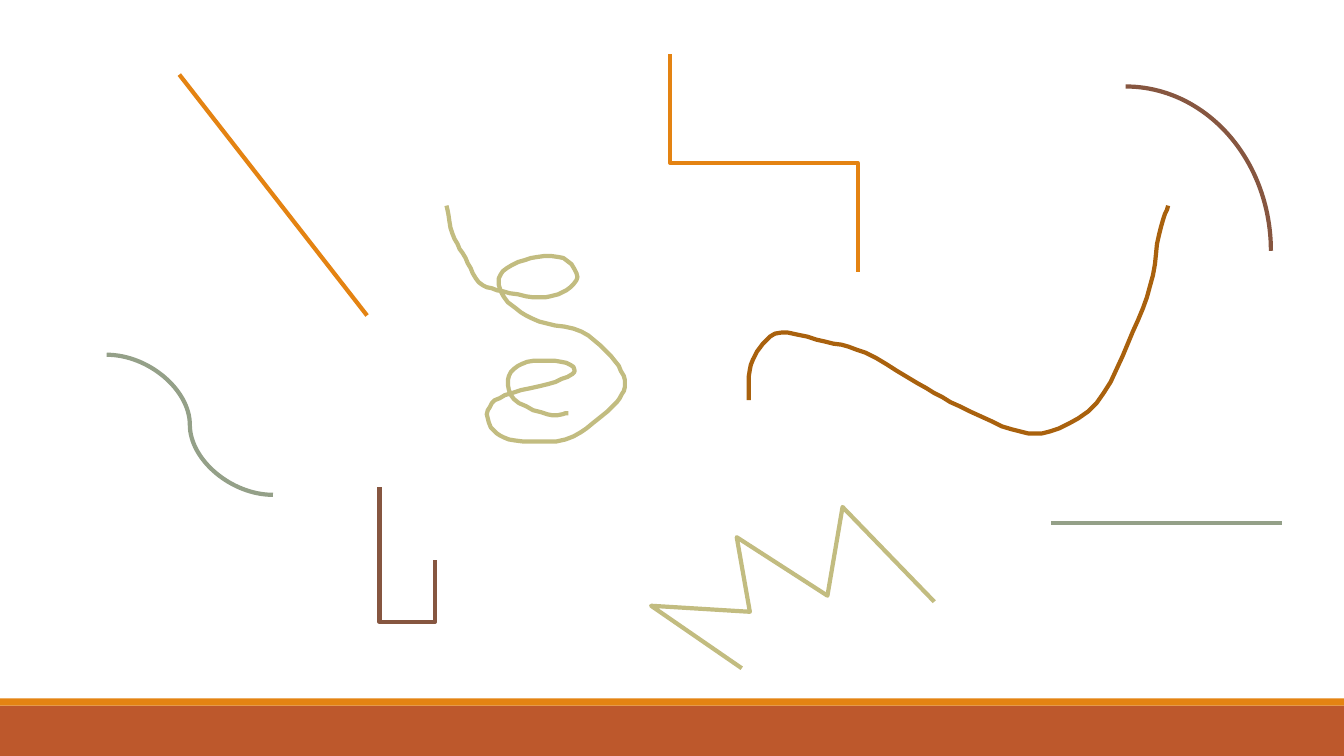
from dataclasses import dataclass

from lxml.etree import SubElement
from pptx import Presentation
from pptx.dml.color import RGBColor
from pptx.enum.shapes import MSO_CONNECTOR as Conn, MSO_SHAPE as Shape
from pptx.oxml.ns import qn
from pptx.shapes.autoshape import Shape as AutoShape
from pptx.shapes.connector import Connector
from pptx.slide import Slide
from pptx.util import Cm, Pt

Point = tuple[float, float]


@dataclass(frozen=True)
class Theme:
    orange: RGBColor = RGBColor.from_string("E48312")
    rust: RGBColor = RGBColor.from_string("BD582C")
    brown: RGBColor = RGBColor.from_string("865640")
    amber: RGBColor = RGBColor.from_string("A9610D")
    olive: RGBColor = RGBColor.from_string("C2BC80")
    sage: RGBColor = RGBColor.from_string("94A088")
    stroke: Pt = Pt(3)


THEME = Theme()
SLIDE_W, SLIDE_H = 33.87, 19.05
FREEFORM_UNIT = Cm(2.54) / 100  # freeform points are in hundredths of an inch
CURVE_STEPS = 5


@dataclass(frozen=True)
class Bar:
    top: float
    height: float
    color: RGBColor


@dataclass(frozen=True)
class Link:
    kind: Conn
    start: Point
    end: Point
    color: RGBColor
    rotation: int = 0
    bend: float | None = None


@dataclass(frozen=True)
class Arc:
    left: float
    top: float
    width: float
    height: float
    color: RGBColor


@dataclass(frozen=True)
class Outline:
    points: list[Point]
    color: RGBColor
    smooth: bool = True


WAVE = [
    (743, 397), (744, 367), (754, 345), (775, 330), (819, 339), (859, 350),
    (910, 380), (952, 403), (1004, 426), (1042, 428), (1088, 400),
    (1119, 341), (1141, 284), (1150, 233), (1159, 204),
]
SCRIBBLE = [
    (564, 410), (543, 411), (510, 396), (505, 373), (523, 359), (557, 359),
    (570, 369), (544, 381), (501, 392), (484, 407), (490, 427), (511, 437),
    (561, 436), (593, 416), (615, 395), (620, 377), (606, 353), (577, 329),
    (535, 319), (508, 303), (496, 286), (499, 269), (527, 256), (559, 256),
    (573, 275), (558, 290), (536, 295), (499, 289), (475, 280), (462, 256),
    (449, 232), (443, 204),
]
ZIGZAG = [
    (736, 663), (646, 601), (744, 607), (731, 533), (821, 591), (836, 503),
    (927, 597),
]

BARS = [Bar(17.78, 1.27, THEME.rust), Bar(17.6, 0.18, THEME.orange)]
STROKES = [
    Link(Conn.STRAIGHT, (4.52, 1.88), (9.25, 7.95), THEME.orange),
    Link(Conn.ELBOW, (22, 1.75), (16.51, 6.47), THEME.orange, rotation=270),
    Outline(WAVE, THEME.amber),
    Link(Conn.CURVE, (2.69, 8.94), (6.88, 12.47), THEME.sage),
    Arc(24.71, 2.18, 7.32, 8.28, THEME.brown),
    Link(Conn.STRAIGHT, (26.49, 13.18), (32.31, 13.18), THEME.sage),
    Outline(SCRIBBLE, THEME.olive),
    Link(Conn.ELBOW, (11.18, 12.5), (9.35, 13.9), THEME.brown, rotation=270, bend=1.85),
    Outline(ZIGZAG, THEME.olive, smooth=False),
]


def smooth_points(points: list[Point]) -> list[Point]:
    """Return points along a Catmull-Rom spline through the given ones."""
    padded = [points[0], *points, points[-1]]
    curve = [points[0]]
    for quad in zip(padded, padded[1:], padded[2:], padded[3:]):
        for step in range(1, CURVE_STEPS + 1):
            t = step / CURVE_STEPS
            x, y = (
                b + t / 2 * (c - a + t * (2 * a - 5 * b + 4 * c - d + t * (3 * (b - c) + d - a)))
                for a, b, c, d in zip(*quad)
            )
            curve.append((x, y))
    return curve


def draw_bar(s: Slide, bar: Bar) -> None:
    sp = s.shapes.add_shape(Shape.RECTANGLE, 0, Cm(bar.top), Cm(SLIDE_W), Cm(bar.height))
    sp.shadow.inherit = False
    sp.fill.solid()
    sp.fill.fore_color.rgb = bar.color
    sp.line.fill.background()


def set_stroke(sp: AutoShape | Connector, color: RGBColor) -> None:
    sp.line.color.rgb = color
    sp.line.width = THEME.stroke


def draw_link(s: Slide, link: Link) -> None:
    """Draw a connector; its start and end are those before rotation."""
    ends = [Cm(v) for v in (*link.start, *link.end)]
    cxn = s.shapes.add_connector(link.kind, *ends)
    set_stroke(cxn, link.color)
    sp_pr = cxn.element.spPr
    SubElement(sp_pr, qn("a:effectLst"))
    if link.rotation:
        sp_pr.find(qn("a:xfrm")).set("rot", str(link.rotation * 60000))
    if link.bend is not None:
        guides = sp_pr.find(qn("a:prstGeom")).find(qn("a:avLst"))
        SubElement(guides, qn("a:gd"), name="adj1", fmla=f"val {round(link.bend * 100000)}")


def draw_open_shape(s: Slide, item: Arc | Outline) -> None:
    if isinstance(item, Arc):
        box = [Cm(v) for v in (item.left, item.top, item.width, item.height)]
        sp = s.shapes.add_shape(Shape.ARC, *box)
    else:
        points = smooth_points(item.points) if item.smooth else item.points
        builder = s.shapes.build_freeform(*points[0], scale=FREEFORM_UNIT)
        builder.add_line_segments(points[1:], close=False)
        sp = builder.convert_to_shape()
    sp.shadow.inherit = False
    sp.fill.background()
    set_stroke(sp, item.color)


def main() -> None:
    prs = Presentation()
    prs.slide_width, prs.slide_height = Cm(SLIDE_W), Cm(SLIDE_H)
    s = prs.slides.add_slide(prs.slide_layouts[6])
    for bar in BARS:
        draw_bar(s, bar)
    for item in STROKES:
        if isinstance(item, Link):
            draw_link(s, item)
        else:
            draw_open_shape(s, item)
    prs.save("out.pptx")


if __name__ == "__main__":
    main()
